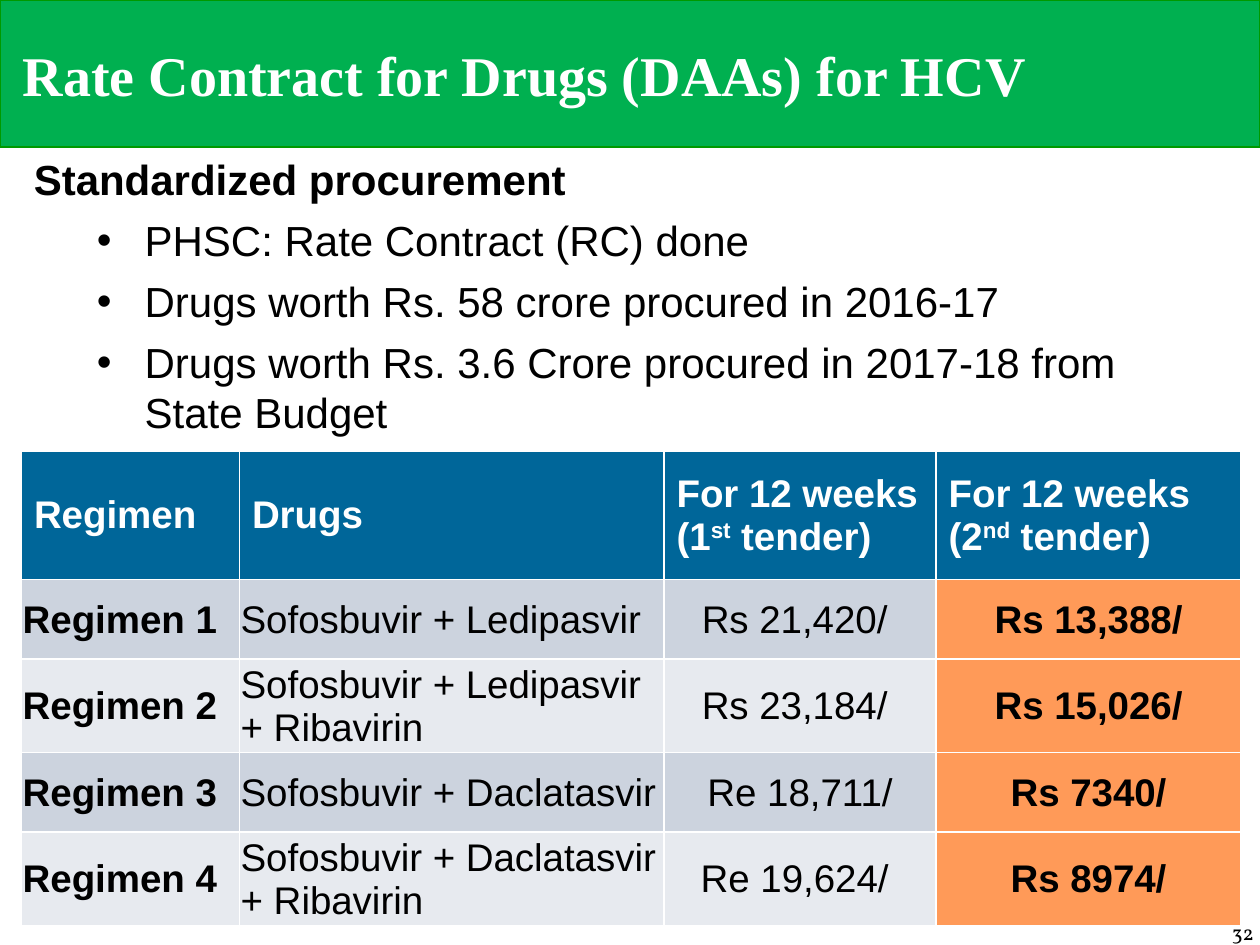
"""Build the slide on rate contracts for HCV drugs."""
from lxml import etree
from pptx import Presentation
from pptx import util as u
from pptx.dml.color import RGBColor
from pptx.enum import shapes, text
from pptx.oxml.ns import qn

THEME = {
    "banner": "00B050", "banner_line": "009900", "header": "006699",
    "bands": ("CCD3DE", "E7EAEF"), "accent": "FF9A58",
    "light": "FFFFFF", "dark": "000000",
    "title_size": 32, "body_size": 24, "table_size": 22, "number_size": 12,
    "title_font": "Times New Roman", "body_font": "Arial", "number_font": "Vollkorn",
}
TITLE = "Rate Contract for Drugs (DAAs) for HCV"
HEADING = "Standardized procurement"
BULLETS = [
    "PHSC: Rate Contract (RC) done",
    "Drugs worth Rs. 58 crore procured in 2016-17",
    "Drugs worth Rs. 3.6 Crore procured in 2017-18 from State Budget",
]
NUMBER = "32"
HEADERS = [
    [["Regimen"]],
    [["Drugs"]],
    [["For 12 weeks"], ["(1", "st", " tender)"]],
    [["For 12 weeks"], ["(2", "nd", " tender)"]],
]
ROWS = [
    ("Regimen 1", "Sofosbuvir + Ledipasvir", "Rs 21,420/ ", "Rs 13,388/"),
    ("Regimen 2", "Sofosbuvir + Ledipasvir + Ribavirin", "Rs 23,184/ ", "Rs 15,026/"),
    ("Regimen 3", "Sofosbuvir + Daclatasvir", "Re 18,711/", "Rs 7340/"),
    ("Regimen 4", "Sofosbuvir + Daclatasvir + Ribavirin", "Re 19,624/ ", "Rs 8974/"),
]
COLUMN_WIDTHS = [1.73, 3.37, 2.16, 2.42]
ROW_HEIGHTS = [1.02, 0.63, 0.74, 0.63, 0.74]
LEFT, CENTER = text.PP_ALIGN.LEFT, text.PP_ALIGN.CENTER
MIDDLE = text.MSO_ANCHOR.MIDDLE


def apply(target, **values):
    for name, value in values.items():
        setattr(target, name, value)


def margins(left, top, right, bottom):
    names = ("margin_left", "margin_top", "margin_right", "margin_bottom")
    return dict(zip(names, map(u.Inches, (left, top, right, bottom))))


def paint(shape, color):
    shape.fill.solid()
    shape.fill.fore_color.rgb = RGBColor.from_string(color)


def add_span(para, words, role, color, bold=False):
    span = para.add_run()
    span.text = words
    apply(span.font, name=THEME[role + "_font"] if role != "table" else THEME["body_font"],
          size=u.Pt(THEME[role + "_size"]), bold=bold)
    span.font.color.rgb = RGBColor.from_string(THEME[color])
    return span


def next_para(frame, index):
    return frame.add_paragraph() if index else frame.paragraphs[0]


def add_banner(page):
    banner = page.shapes.add_shape(shapes.MSO_SHAPE.RECTANGLE, 0, 0, u.Inches(10), u.Inches(1.17))
    banner.shadow.inherit = False
    paint(banner, THEME["banner"])
    banner.line.color.rgb = RGBColor.from_string(THEME["banner_line"])
    banner.line.width = u.Pt(1)
    page.shapes._spTree.insert(2, banner._element)


def add_title(page):
    title = page.shapes.title
    apply(title, left=u.Inches(0.08), top=u.Inches(0.17),
          width=u.Inches(8.25), height=u.Inches(0.83))
    apply(title.text_frame, vertical_anchor=MIDDLE, word_wrap=True,
          auto_size=text.MSO_AUTO_SIZE.NONE)
    para = title.text_frame.paragraphs[0]
    para.alignment = LEFT
    add_span(para, TITLE, "title", "light", True)


def add_body(page):
    box = page.shapes.add_textbox(*map(u.Inches, (0.17, 1.17, 9.56, 2.37)))
    frame = box.text_frame
    apply(frame, word_wrap=True, auto_size=text.MSO_AUTO_SIZE.SHAPE_TO_FIT_TEXT)
    for index, words in enumerate([HEADING, *BULLETS]):
        para = next_para(frame, index)
        para.space_after = u.Pt(6)
        add_span(para, words, "body", "dark", index == 0)
        if index:
            para.level = 1
            properties = para._p.get_or_add_pPr()
            properties.set("marL", str(u.Inches(0.88)))
            properties.set("indent", str(u.Inches(-0.38)))
            etree.SubElement(properties, qn("a:buFont"), typeface=THEME["body_font"])
            etree.SubElement(properties, qn("a:buChar"), char="•")


def add_number(page):
    box = page.shapes.add_textbox(*map(u.Inches, (9.73, 7.1, 0.27, 0.4)))
    apply(box.text_frame, word_wrap=True, vertical_anchor=text.MSO_ANCHOR.BOTTOM,
          **margins(0, 0, 0, 0))
    para = box.text_frame.paragraphs[0]
    para.alignment = CENTER
    add_span(para, NUMBER, "number", "dark")


def fill_header(cell, lines):
    apply(cell, vertical_anchor=MIDDLE, **margins(0.1, 0.05, 0.1, 0.05))
    paint(cell, THEME["header"])
    for index, parts in enumerate(lines):
        para = next_para(cell.text_frame, index)
        for words in parts:
            span = add_span(para, words, "table", "light", True)
            if words in ("st", "nd"):
                span.font._element.set("baseline", "30000")


def fill_cell(cell, words, row, column):
    apply(cell, vertical_anchor=MIDDLE, **margins(0.01, 0.01, 0.01, 0))
    paint(cell, THEME["accent"] if column == 3 else THEME["bands"][row % 2])
    para = cell.text_frame.paragraphs[0]
    para.alignment = CENTER if column >= 2 else LEFT
    add_span(para, words, "table", "dark", column in (0, 3))


def add_rates(page):
    table = page.shapes.add_table(
        len(ROW_HEIGHTS), len(COLUMN_WIDTHS), u.Inches(0.17), u.Inches(3.58),
        u.Inches(sum(COLUMN_WIDTHS)), u.Inches(sum(ROW_HEIGHTS))).table
    for column, width in zip(table.columns, COLUMN_WIDTHS):
        column.width = u.Inches(width)
    for row, height in zip(table.rows, ROW_HEIGHTS):
        row.height = u.Inches(height)
    for column, lines in enumerate(HEADERS):
        fill_header(table.cell(0, column), lines)
    for row, values in enumerate(ROWS):
        for column, words in enumerate(values):
            fill_cell(table.cell(row + 1, column), words, row, column)


def main():
    deck = Presentation()
    apply(deck, slide_width=u.Inches(10), slide_height=u.Inches(7.5))
    page = deck.slides.add_slide(deck.slide_layouts[5])
    for add_part in (add_banner, add_number, add_title, add_body, add_rates):
        add_part(page)
    deck.save("out.pptx")


if __name__ == "__main__":
    main()
